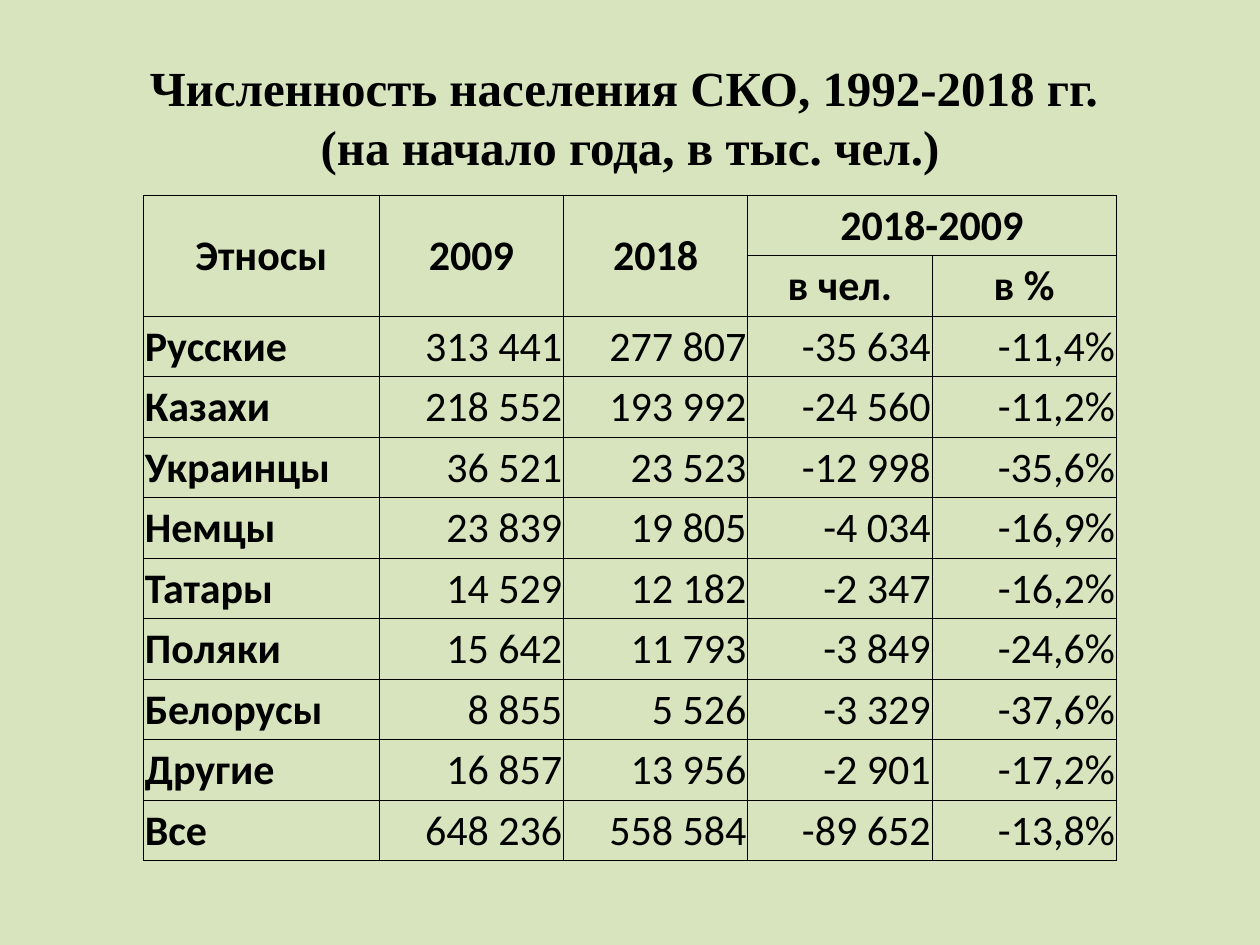
from dataclasses import dataclass

from lxml.etree import SubElement
from pptx import Presentation
from pptx.dml.color import RGBColor
from pptx.enum.text import MSO_ANCHOR, PP_ALIGN
from pptx.oxml.ns import qn
from pptx.util import Inches, Pt

W, H = 10, 7.5
BACK, INK = "D7E4BD", "000000"
LEFT, TOP = 0.114 * W, 1.55
NAME_COL, VALUE_COL, ROW = 1.87, 1.4625, 0.48


@dataclass
class Group:
    name: str
    y2009: str
    y2018: str
    people: str
    percent: str


@dataclass
class Heading:
    text: str
    row: int
    col: int
    rows: int = 1
    cols: int = 1


HEADINGS = [
    Heading("Этносы", 0, 0, rows=2),
    Heading("2009", 0, 1, rows=2),
    Heading("2018", 0, 2, rows=2),
    Heading("2018-2009", 0, 3, cols=2),
    Heading("в чел.", 1, 3),
    Heading("в %", 1, 4),
]
GROUPS = [
    Group("Русские", "313 441", "277 807", "-35 634", "-11,4%"),
    Group("Казахи", "218 552", "193 992", "-24 560", "-11,2%"),
    Group("Украинцы", "36 521", "23 523", "-12 998", "-35,6%"),
    Group("Немцы", "23 839", "19 805", "-4 034", "-16,9%"),
    Group("Татары", "14 529", "12 182", "-2 347", "-16,2%"),
    Group("Поляки", "15 642", "11 793", "-3 849", "-24,6%"),
    Group("Белорусы", "8 855", "5 526", "-3 329", "-37,6%"),
    Group("Другие", "16 857", "13 956", "-2 901", "-17,2%"),
    Group("Все", "648 236", "558 584", "-89 652", "-13,8%"),
]


def color(value: str) -> RGBColor:
    return RGBColor.from_string(value)


def add_run(p, text: str, font: str, size: float, bold: bool) -> None:
    r = p.add_run()
    r.text = text
    r.font.name = font
    r.font.size = Pt(size)
    r.font.bold = bold
    r.font.color.rgb = color(INK)


def add_title(s, lines: list[str]) -> None:
    sp = s.shapes.add_textbox(Inches(0.05 * W), Inches(0.04 * H), Inches(0.9 * W), Inches(1.25))
    tf = sp.text_frame
    tf.word_wrap = True
    tf.vertical_anchor = MSO_ANCHOR.MIDDLE
    p = tf.paragraphs[0]
    p.alignment = PP_ALIGN.CENTER
    for i, line in enumerate(lines):
        if i:
            p.add_line_break()
        add_run(p, line, "Times New Roman", 28, True)


def style_cell(cell) -> None:
    cell.margin_left = cell.margin_right = cell.margin_top = Inches(0.01)
    cell.margin_bottom = 0
    cell.vertical_anchor = MSO_ANCHOR.MIDDLE
    tcPr = cell._tc.get_or_add_tcPr()
    for side in ("a:lnL", "a:lnR", "a:lnT", "a:lnB"):
        ln = SubElement(tcPr, qn(side), w=str(Pt(0.5)))
        SubElement(SubElement(ln, qn("a:solidFill")), qn("a:srgbClr"), val=INK)
    cell.fill.background()


def write_cell(cell, text: str, align: PP_ALIGN, bold: bool) -> None:
    p = cell.text_frame.paragraphs[0]
    p.alignment = align
    add_run(p, text, "Calibri", 24, bold)


def add_population_table(s) -> None:
    widths = [NAME_COL] + [VALUE_COL] * 4
    n = len(GROUPS) + 2
    tbl = s.shapes.add_table(n, len(widths), Inches(LEFT), Inches(TOP),
                             Inches(sum(widths)), Inches(n * ROW)).table
    tbl.first_row = tbl.horz_banding = False
    for col, width in zip(tbl.columns, widths):
        col.width = Inches(width)
    for row in tbl.rows:
        row.height = Inches(ROW)
        for cell in row.cells:
            style_cell(cell)
    for h in HEADINGS:
        cell = tbl.cell(h.row, h.col)
        if h.rows > 1 or h.cols > 1:
            cell.merge(tbl.cell(h.row + h.rows - 1, h.col + h.cols - 1))
        write_cell(cell, h.text, PP_ALIGN.CENTER, True)
    for i, g in enumerate(GROUPS, 2):
        write_cell(tbl.cell(i, 0), g.name, PP_ALIGN.LEFT, True)
        for j, value in enumerate((g.y2009, g.y2018, g.people, g.percent), 1):
            write_cell(tbl.cell(i, j), value, PP_ALIGN.RIGHT, False)


def main() -> None:
    prs = Presentation()
    prs.slide_width, prs.slide_height = Inches(W), Inches(H)
    s = prs.slides.add_slide(prs.slide_layouts[6])
    s.background.fill.solid()
    s.background.fill.fore_color.rgb = color(BACK)
    add_title(s, ["Численность населения СКО, 1992-2018 гг. ", "(на начало года, в тыс. чел.)"])
    add_population_table(s)
    prs.save("out.pptx")


if __name__ == "__main__":
    main()
